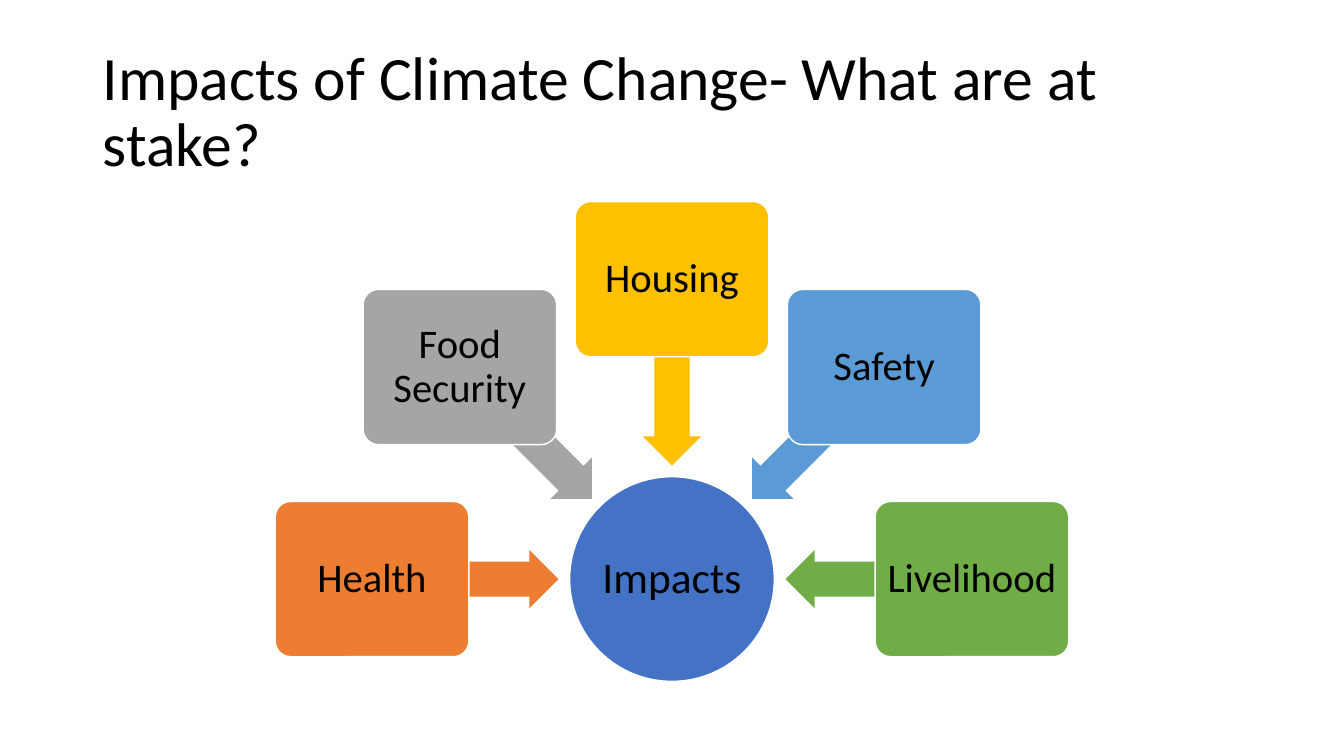
import math

from pptx import Presentation
from pptx import util as u
from pptx.dml.color import RGBColor
from pptx.enum import shapes, text

BLACK = RGBColor(0x00, 0x00, 0x00)
WHITE = RGBColor(0xFF, 0xFF, 0xFF)
BLUE = RGBColor(0x44, 0x72, 0xC4)
ORANGE = RGBColor(0xED, 0x7D, 0x31)
GRAY = RGBColor(0xA5, 0xA5, 0xA5)
GOLD = RGBColor(0xFF, 0xC0, 0x00)
SKY = RGBColor(0x5B, 0x9B, 0xD5)
GREEN = RGBColor(0x70, 0xAD, 0x47)

SLIDE_WIDTH, SLIDE_HEIGHT = 13.33, 7.5
TITLE_BOX = (0.92, 0.4, 11.5, 1.45)
DIAGRAM_BOX = (2.73, 2.0, 7.87, 4.76)
IMPACTS = [
    ("Health", ORANGE),
    ("Food Security", GRAY),
    ("Housing", GOLD),
    ("Safety", SKY),
    ("Livelihood", GREEN),
]


def write_text(shape, content, size, align=text.PP_ALIGN.CENTER, inset=0.06):
    """Fill a shape with one formatted, vertically centred paragraph."""
    frame = shape.text_frame
    frame.word_wrap = True
    frame.auto_size = text.MSO_AUTO_SIZE.NONE
    frame.vertical_anchor = text.MSO_ANCHOR.MIDDLE
    frame.margin_left = frame.margin_right = u.Inches(inset)
    frame.margin_top = frame.margin_bottom = u.Inches(inset)
    paragraph = frame.paragraphs[0]
    paragraph.alignment = align
    paragraph.line_spacing = 0.9
    run = paragraph.add_run()
    run.text = content
    run.font.name = "Calibri"
    run.font.size = u.Pt(size)
    run.font.color.rgb = BLACK


def add_centered(group, kind, center, size, color, outlined=True):
    """Add a filled preset shape around a centre point."""
    left, top = (c - s / 2 for c, s in zip(center, size))
    shape = group.shapes.add_shape(kind, *map(u.Inches, (left, top, *size)))
    shape.shadow.inherit = False
    shape.fill.solid()
    shape.fill.fore_color.rgb = color
    if outlined:
        shape.line.color.rgb = WHITE
        shape.line.width = u.Pt(1)
    else:
        shape.line.fill.background()
    return shape


def add_title(slide, box):
    """Place and write the slide title."""
    title = slide.shapes.title
    title.left, title.top, title.width, title.height = map(u.Inches, box)
    write_text(title, "Impacts of Climate Change- What are at stake?", 44,
               align=text.PP_ALIGN.LEFT, inset=0.1)


def add_radial_diagram(slide, box):
    """Draw the hub with a half ring of impacts pointing to it."""
    left, top, width, height = box
    hub_size = 2.03
    card_size = (1.92, 1.54)
    arrow_size = (1.85, 0.58)
    hub = (left + width / 2, top + height - hub_size / 2)
    card_radius = (width - card_size[0]) / 2
    arrow_radius = 2.05
    step = 180 / (len(IMPACTS) - 1)
    group = slide.shapes.add_group_shape()

    def around_hub(angle, radius):
        """Return the point at an angle and distance from the hub."""
        turn = math.radians(angle)
        return hub[0] + radius * math.cos(turn), hub[1] + radius * math.sin(turn)

    circle = add_centered(group, shapes.MSO_SHAPE.OVAL, hub, (hub_size, hub_size), BLUE)
    write_text(circle, "Impacts", 31, inset=0.02)
    for index, (label, color) in enumerate(IMPACTS):
        angle = 180 + index * step
        arrow = add_centered(group, shapes.MSO_SHAPE.LEFT_ARROW,
                             around_hub(angle, arrow_radius), arrow_size, color,
                             outlined=False)
        arrow.adjustments[0] = 0.6
        arrow.adjustments[1] = 0.5
        arrow.rotation = angle % 360
        card = add_centered(group, shapes.MSO_SHAPE.ROUNDED_RECTANGLE,
                            around_hub(angle, card_radius), card_size, color)
        card.adjustments[0] = 0.1
        write_text(card, label, 29)


def main():
    """Build and save the presentation."""
    presentation = Presentation()
    presentation.slide_width = u.Inches(SLIDE_WIDTH)
    presentation.slide_height = u.Inches(SLIDE_HEIGHT)
    slide = presentation.slides.add_slide(presentation.slide_layouts[5])
    add_title(slide, TITLE_BOX)
    add_radial_diagram(slide, DIAGRAM_BOX)
    presentation.save("out.pptx")


if __name__ == "__main__":
    main()
